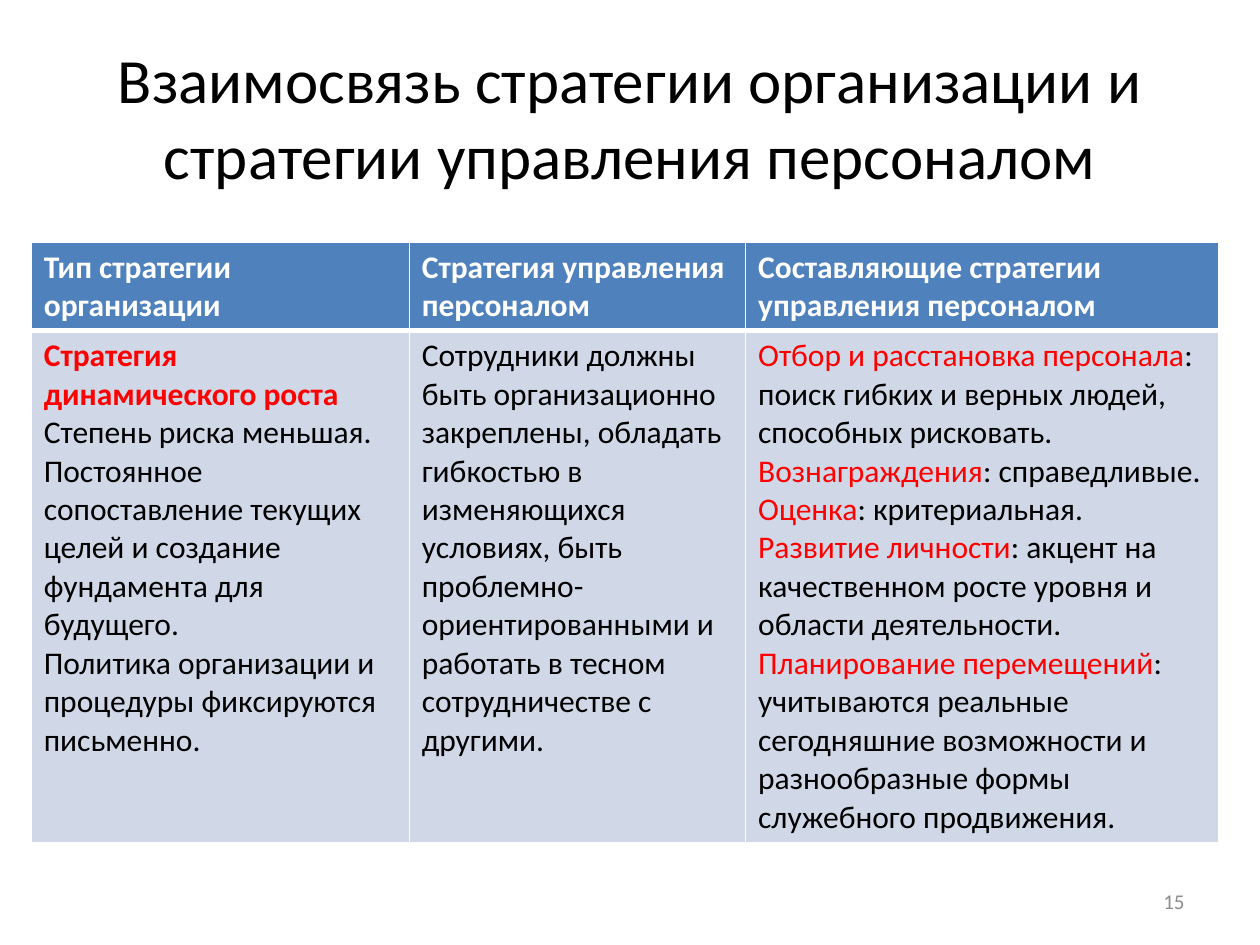
from typing import NamedTuple

from lxml import etree
from pptx import Presentation
from pptx import util as u
from pptx.dml.color import RGBColor
from pptx.enum import text
from pptx.oxml import ns

BLACK, WHITE, RED, GREY = "000000", "FFFFFF", "FF0000", "8C8C8C"
HEADER_FILL, BODY_FILL = "4F81BD", "D0D8E8"


class Span(NamedTuple):
    text: str
    color: str = BLACK
    bold: bool = False


Para = list[Span]


def rgb(value: str) -> RGBColor:
    return RGBColor.from_string(value)


def write(frame, paras: list[Para], *, size: float, align=text.PP_ALIGN.LEFT,
          anchor=text.MSO_ANCHOR.TOP) -> None:
    frame.word_wrap = True
    for index, spans in enumerate(paras):
        para = frame.paragraphs[0] if index == 0 else frame.add_paragraph()
        para.alignment = align
        for span in spans:
            run = para.add_run()
            run.text = span.text
            run.font.name = "Calibri"
            run.font.size = u.Pt(size)
            run.font.bold = span.bold
            run.font.color.rgb = rgb(span.color)
    frame.vertical_anchor = anchor


def add_text(page, left: float, top: float, width: float, height: float,
             span: Span, **style) -> None:
    """Add a vertically centred text box; lengths are in centimetres."""
    box = page.shapes.add_textbox(u.Cm(left), u.Cm(top), u.Cm(width), u.Cm(height))
    write(box.text_frame, [[span]], anchor=text.MSO_ANCHOR.MIDDLE, **style)


def set_borders(cell, **widths: float) -> None:
    """Draw white borders; keys are the sides L, R, T and B, widths are points."""
    properties = cell._tc.get_or_add_tcPr()
    for side, width in widths.items():
        line = etree.SubElement(properties, ns.qn(f"a:ln{side}"), w=str(u.Pt(width)))
        fill = etree.SubElement(line, ns.qn("a:solidFill"))
        etree.SubElement(fill, ns.qn("a:srgbClr"), val=WHITE)


def topic(name: str, detail: str) -> Para:
    return [Span(name, RED), Span(f": {detail}")]


HEADERS = [
    "Тип стратегии организации",
    "Стратегия управления персоналом",
    "Составляющие стратегии управления персоналом",
]
STRATEGY = [
    [Span("Стратегия динамического роста", RED, True)],
    [Span("Степень риска меньшая. Постоянное сопоставление текущих целей "
          "и создание фундамента для будущего.")],
    [Span("Политика организации и процедуры фиксируются письменно.")],
]
STAFF = [
    [Span("Сотрудники должны быть организационно закреплены, обладать гибкостью "
          "в изменяющихся условиях, быть проблемно- ориентированными и работать "
          "в тесном сотрудничестве с другими.")],
]
COMPONENTS = [
    topic("Отбор и расстановка персонала",
          "поиск гибких и верных людей, способных рисковать."),
    topic("Вознаграждения", "справедливые."),
    topic("Оценка", "критериальная."),
    topic("Развитие личности",
          "акцент на качественном росте уровня и области деятельности."),
    topic("Планирование перемещений",
          "учитываются реальные сегодняшние возможности и разнообразные формы "
          "служебного продвижения."),
]
COLUMN_WIDTHS = [7.62, 6.78, 9.53]
ROW_HEIGHTS = [1.78, 10.32]


def add_strategy_table(page) -> None:
    rows = [[[[Span(header, WHITE, True)]] for header in HEADERS],
            [STRATEGY, STAFF, COMPONENTS]]
    table = page.shapes.add_table(
        len(rows), len(HEADERS), u.Cm(0.63), u.Cm(4.88),
        u.Cm(sum(COLUMN_WIDTHS)), u.Cm(sum(ROW_HEIGHTS))).table
    for column, width in zip(table.columns, COLUMN_WIDTHS):
        column.width = u.Cm(width)
    for row, height in zip(table.rows, ROW_HEIGHTS):
        row.height = u.Cm(height)

    for row_index, contents in enumerate(rows):
        is_header = row_index == 0
        for column_index, paras in enumerate(contents):
            cell = table.cell(row_index, column_index)
            set_borders(cell, L=1, R=1, T=1 if is_header else 3,
                        B=3 if is_header else 1)
            cell.fill.solid()
            cell.fill.fore_color.rgb = rgb(HEADER_FILL if is_header else BODY_FILL)
            write(cell.text_frame, paras, size=18)


def main() -> None:
    deck = Presentation()
    deck.slide_width, deck.slide_height = u.Cm(25.4), u.Cm(19.05)
    page = deck.slides.add_slide(deck.slide_layouts[6])
    add_text(page, 1.27, 0.76, 22.86, 3.18,
             Span("Взаимосвязь стратегии организации и стратегии управления персоналом"),
             size=36, align=text.PP_ALIGN.CENTER)
    add_strategy_table(page)
    add_text(page, 18.2, 17.66, 5.93, 1.01, Span("15", GREY),
             size=12, align=text.PP_ALIGN.RIGHT)
    deck.save("out.pptx")


if __name__ == "__main__":
    main()
